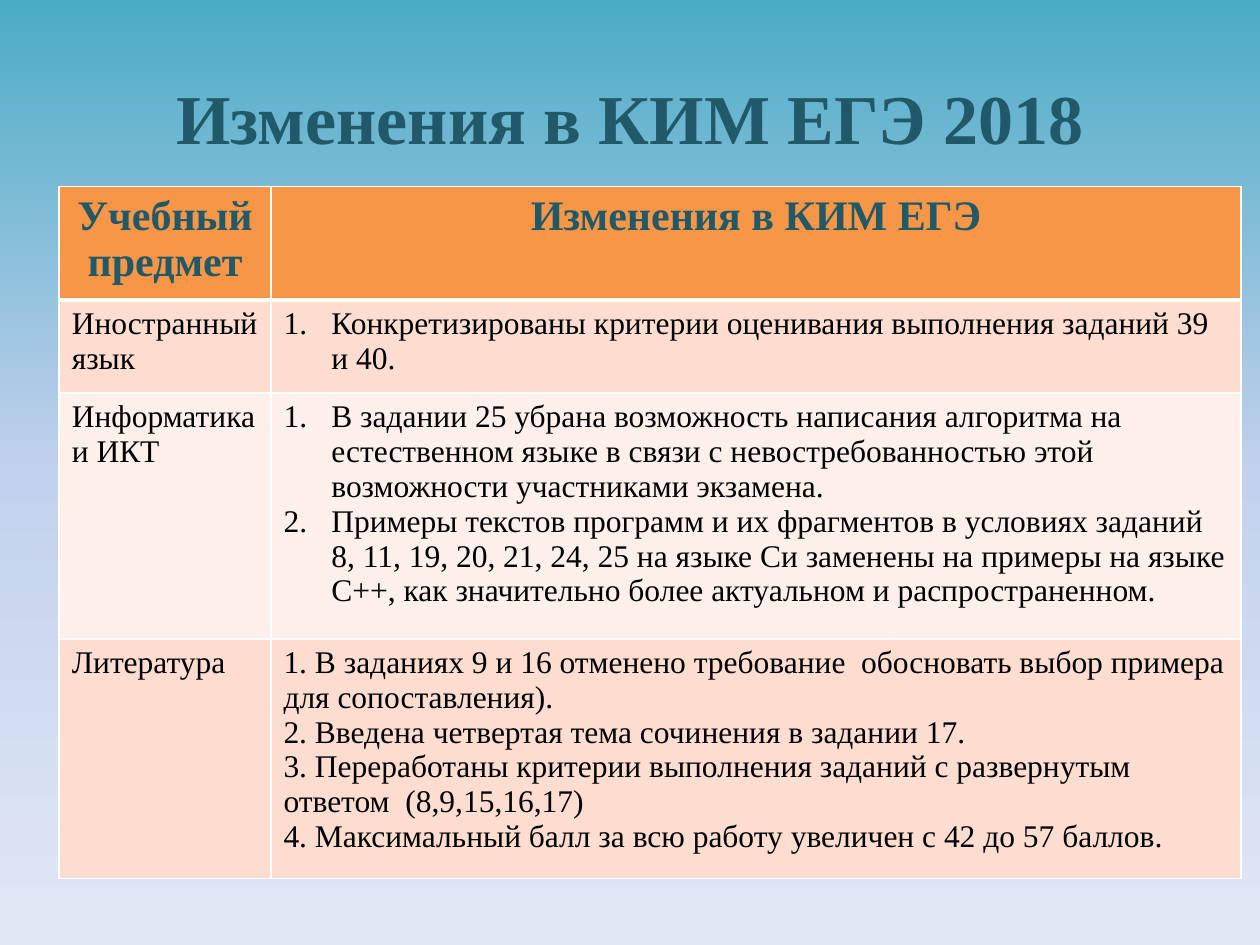
from copy import deepcopy

from lxml.etree import SubElement
from pptx import Presentation
from pptx.dml.color import RGBColor
from pptx.enum.text import MSO_ANCHOR as Anchor, PP_ALIGN as Align
from pptx.oxml.ns import qn
from pptx.util import Inches, Pt

BACKGROUND = [(0, "4BACC6"), (0.5, "C2D1ED"), (1, "E1E8F5")]
DARK, WHITE, ORANGE = "215968", "FFFFFF", "F79646"
BANDS = ["FCDDCF", "FDEFE9"]
TITLE = {"name": "Times New Roman", "size": Pt(40), "bold": True, "color": DARK}
HEADER = {**TITLE, "size": Pt(24)}
BODY = {**TITLE, "size": Pt(18), "bold": False, "color": "000000"}

COLUMN_WIDTHS = [1.68, 7.7]
ROW_HEIGHTS = [0.83, 0.74, 1.95, 1.76]
HEADINGS = ["Учебный предмет", "Изменения в КИМ ЕГЭ"]
# Subject, whether its changes are numbered automatically, changes
SUBJECTS = [
    ("Иностранный язык", True, [
        "Конкретизированы критерии оценивания выполнения заданий 39 и 40.",
    ]),
    ("Информатика и ИКТ", True, [
        "В задании 25 убрана возможность написания алгоритма на естественном языке "
        "в связи с невостребованностью этой возможности участниками экзамена.",
        "Примеры текстов программ и их фрагментов в условиях заданий 8, 11, 19, 20, "
        "21, 24, 25 на языке Си заменены на примеры на языке С++, как значительно "
        "более актуальном и распространенном.",
    ]),
    ("Литература", False, [
        "1. В заданиях 9 и 16 отменено требование  обосновать выбор примера "
        "для сопоставления).",
        "2. Введена четвертая тема сочинения в задании 17.",
        "3. Переработаны критерии выполнения заданий с развернутым ответом  "
        "(8,9,15,16,17)",
        "4. Максимальный балл за всю работу увеличен с 42 до 57 баллов.",
    ]),
]


def rgb(value):
    return RGBColor.from_string(value)


def write(frame, lines, style, align=Align.LEFT, numbered=False):
    for index, line in enumerate(lines):
        para = frame.paragraphs[0] if index == 0 else frame.add_paragraph()
        para.alignment = align
        if numbered:
            number_paragraph(para)
        span = para.add_run()
        span.text = line
        for name, value in style.items():
            if name == "color":
                span.font.color.rgb = rgb(value)
            else:
                setattr(span.font, name, value)


def number_paragraph(para):
    properties = para._p.get_or_add_pPr()
    hang = Inches(0.38)
    properties.set("marL", str(hang))
    properties.set("indent", str(-hang))
    SubElement(properties, qn("a:buAutoNum"), type="arabicPeriod")


def draw_borders(cell, widths):
    """Draw white cell borders; widths maps L, R, T, B, in that order, to points."""
    properties = cell._tc.get_or_add_tcPr()
    for side, width in widths.items():
        line = SubElement(properties, qn(f"a:ln{side}"), w=str(Pt(width)))
        fill = SubElement(line, qn("a:solidFill"))
        SubElement(fill, qn("a:srgbClr"), val=WHITE)


def paint_background(page):
    fill = page.background.fill
    fill.gradient()
    fill.gradient_angle = 270
    stop_list = page.element.find(".//" + qn("a:gsLst"))
    stop_list.append(deepcopy(stop_list[0]))
    for stop, (position, color) in zip(fill.gradient_stops, BACKGROUND):
        stop.position = position
        stop.color.rgb = rgb(color)


def add_title(page, left, top, width, height):
    frame = page.shapes.add_textbox(left, top, width, height).text_frame
    frame.word_wrap = True
    frame.vertical_anchor = Anchor.MIDDLE
    write(frame, ["Изменения в КИМ ЕГЭ 2018"], TITLE, Align.CENTER)


def add_changes_table(page, left, top, width, height):
    table = page.shapes.add_table(
        len(ROW_HEIGHTS), len(COLUMN_WIDTHS), left, top, width, height).table
    for column, size in zip(table.columns, COLUMN_WIDTHS):
        column.width = Inches(size)
    for row, size in zip(table.rows, ROW_HEIGHTS):
        row.height = Inches(size)

    for index, row in enumerate(table.rows):
        color = BANDS[(index - 1) % 2] if index else ORANGE
        for cell in row.cells:
            draw_borders(cell, {"L": 1, "R": 1, "T": 3 if index == 1 else 1,
                                "B": 1 if index else 3})
            cell.fill.solid()
            cell.fill.fore_color.rgb = rgb(color)

    for column, heading in enumerate(HEADINGS):
        write(table.cell(0, column).text_frame, [heading], HEADER, Align.CENTER)
    for row, (subject, numbered, changes) in enumerate(SUBJECTS, 1):
        write(table.cell(row, 0).text_frame, [subject], BODY)
        write(table.cell(row, 1).text_frame, changes, BODY, numbered=numbered)


def main():
    deck = Presentation()
    deck.slide_width, deck.slide_height = Inches(10), Inches(7.5)
    page = deck.slides.add_slide(deck.slide_layouts[6])
    paint_background(page)
    add_title(page, Inches(0.5), Inches(0.3), Inches(9), Inches(1.25))
    add_changes_table(page, Inches(0.47), Inches(1.48),
                      Inches(sum(COLUMN_WIDTHS)), Inches(sum(ROW_HEIGHTS)))
    deck.save("out.pptx")


if __name__ == "__main__":
    main()
